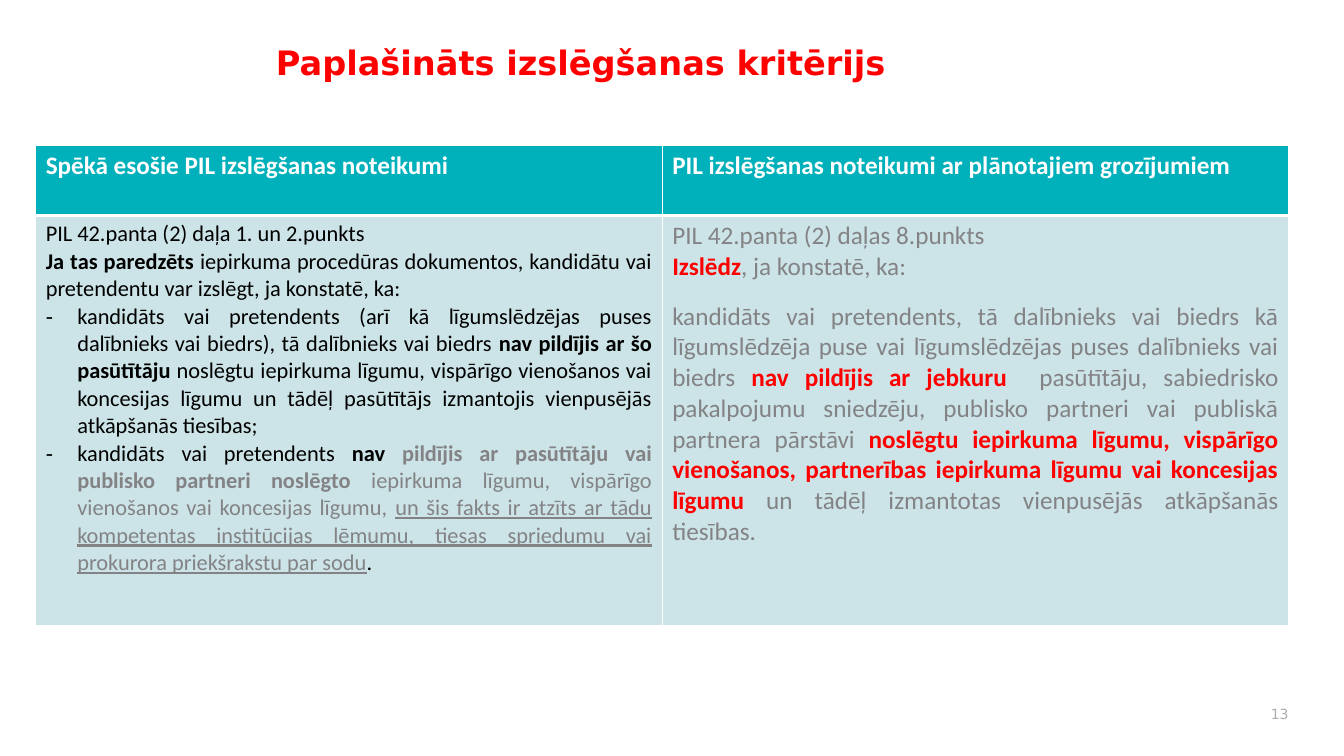
from lxml import etree
from pptx import Presentation
from pptx.dml.color import RGBColor
from pptx.enum.text import MSO_ANCHOR, PP_ALIGN
from pptx.oxml.ns import qn
from pptx.util import Pt

LEFT, RIGHT, JUST = PP_ALIGN.LEFT, PP_ALIGN.RIGHT, PP_ALIGN.JUSTIFY
TOP, MID = MSO_ANCHOR.TOP, MSO_ANCHOR.MIDDLE
HUES = {"red": "FF0000", "teal": "00B0BA", "pale": "CCE4E7", "grey": "838386",
        "light": "ADADAF", "black": "000000", "white": "FFFFFF"}
HEADS = ["Spēkā esošie PIL izslēgšanas noteikumi",
         "PIL izslēgšanas noteikumi ar plānotajiem grozījumiem"]
OLD = [
    (LEFT, False, 0, [("PIL 42.panta (2) daļa 1. un 2.punkts", "black", "")]),
    (JUST, False, 0, [
        ("Ja tas paredzēts ", "black", "b"),
        ("iepirkuma procedūras dokumentos, kandidātu vai pretendentu var izslēgt, "
         "ja konstatē, ka:", "black", "")]),
    (JUST, True, 0, [
        ("kandidāts vai pretendents (arī kā līgumslēdzējas puses dalībnieks vai "
         "biedrs), tā dalībnieks vai biedrs ", "black", ""),
        ("nav pildījis ar šo pasūtītāju", "black", "b"),
        (" noslēgtu iepirkuma līgumu, vispārīgo vienošanos vai koncesijas līgumu un "
         "tādēļ pasūtītājs izmantojis vienpusējās atkāpšanās tiesības;", "black", "")]),
    (JUST, True, 0, [
        ("kandidāts vai pretendents ", "black", ""),
        ("nav ", "black", "b"),
        ("pildījis ar pasūtītāju vai publisko partneri noslēgto", "grey", "b"),
        (" iepirkuma līgumu, vispārīgo vienošanos vai koncesijas līgumu, ", "grey", ""),
        ("un šis fakts ir atzīts ar tādu kompetentas institūcijas lēmumu, tiesas "
         "spriedumu vai prokurora priekšrakstu par sodu", "grey", "u"),
        (".", "black", "")]),
]
NEW = [
    (LEFT, False, 0, [("PIL 42.panta (2) daļas 8.punkts", "grey", "")]),
    (LEFT, False, 0, [("Izslēdz", "red", "b"), (", ja konstatē, ka:", "grey", "")]),
    (JUST, False, 13.5, [
        ("kandidāts vai pretendents, tā dalībnieks vai biedrs kā līgumslēdzēja puse "
         "vai līgumslēdzējas puses dalībnieks vai biedrs ", "grey", ""),
        ("nav pildījis ar jebkuru  ", "red", "b"),
        ("pasūtītāju, sabiedrisko pakalpojumu sniedzēju, publisko partneri vai "
         "publiskā partnera pārstāvi ", "grey", ""),
        ("noslēgtu iepirkuma līgumu, vispārīgo vienošanos, partnerības iepirkuma "
         "līgumu vai koncesijas līgumu ", "red", "b"),
        ("un tādēļ izmantotas vienpusējās atkāpšanās tiesības.", "grey", "")]),
]


class Deck:
    """Holds the style and the current slide."""

    def __init__(self):
        self.prs = Presentation()
        self.prs.slide_width, self.prs.slide_height = Pt(960), Pt(540)
        self.slide = self.prs.slides.add_slide(self.prs.slide_layouts[6])
        self.sans, self.body = "DejaVu Sans", "Calibri"

    def hue(self, name):
        return RGBColor.from_string(HUES[name])

    def text(self, box, words, size, hue, bold=False, align=LEFT, anchor=TOP, lead=1.0):
        frame = self.slide.shapes.add_textbox(*map(Pt, box)).text_frame
        frame.word_wrap, frame.vertical_anchor = True, anchor
        par = frame.paragraphs[0]
        par.text, par.alignment, par.line_spacing = words, align, lead
        font = par.font
        font.name, font.size, font.bold = self.sans, Pt(size), bold
        font.color.rgb = self.hue(hue)

    def bullet(self, par):
        props = par._p.get_or_add_pPr()
        props.set("marL", str(Pt(22.5)))
        props.set("indent", str(-Pt(22.5)))
        etree.SubElement(props, qn("a:buFont")).set("typeface", self.body)
        etree.SubElement(props, qn("a:buChar")).set("char", "⁃")

    def border(self, cell, **widths):
        props = cell._tc.get_or_add_tcPr()
        for side in "LRTB":
            line = etree.SubElement(props, qn("a:ln" + side))
            line.set("w", str(Pt(widths.get(side, 1))))
            fill = etree.SubElement(line, qn("a:solidFill"))
            etree.SubElement(fill, qn("a:srgbClr")).set("val", HUES["white"])

    def cell(self, cell, pars, size, fill, **widths):
        self.border(cell, **widths)
        cell.fill.solid()
        cell.fill.fore_color.rgb = self.hue(fill)
        frame = cell.text_frame
        for i, (align, dash, gap, runs) in enumerate(pars):
            par = frame.add_paragraph() if i else frame.paragraphs[0]
            par.alignment = align
            if gap:
                par.space_before = Pt(gap)
            if dash:
                self.bullet(par)
            par.font.name, par.font.size = self.body, Pt(size)
            for words, hue, marks in runs:
                run = par.add_run()
                run.text = words
                run.font.color.rgb = self.hue(hue)
                run.font.bold = "b" in marks
                if "u" in marks:
                    run.font.underline = True

    def table(self, box, rows, heads, cols):
        grid = self.slide.shapes.add_table(2, len(heads), *map(Pt, box)).table
        for row, high in zip(grid.rows, rows):
            row.height = Pt(high)
        for i, (head, (pars, size)) in enumerate(zip(heads, cols)):
            title = [(LEFT, False, 0, [(head, "white", "b")])]
            self.cell(grid.cell(0, i), title, 18, "teal", B=3)
            self.cell(grid.cell(1, i), pars, size, "pale", T=3)


def main():
    deck = Deck()
    deck.text((190, 30, 722, 81), "Paplašināts izslēgšanas kritērijs", 24, "red",
              bold=True, lead=0.9)
    deck.table((25.5, 104, 895, 343), (50, 293), HEADS, [(OLD, 16), (NEW, 18)])
    deck.text((883.5, 498, 44, 24), "13", 10, "light", align=RIGHT, anchor=MID)
    deck.prs.save("out.pptx")


if __name__ == "__main__":
    main()
